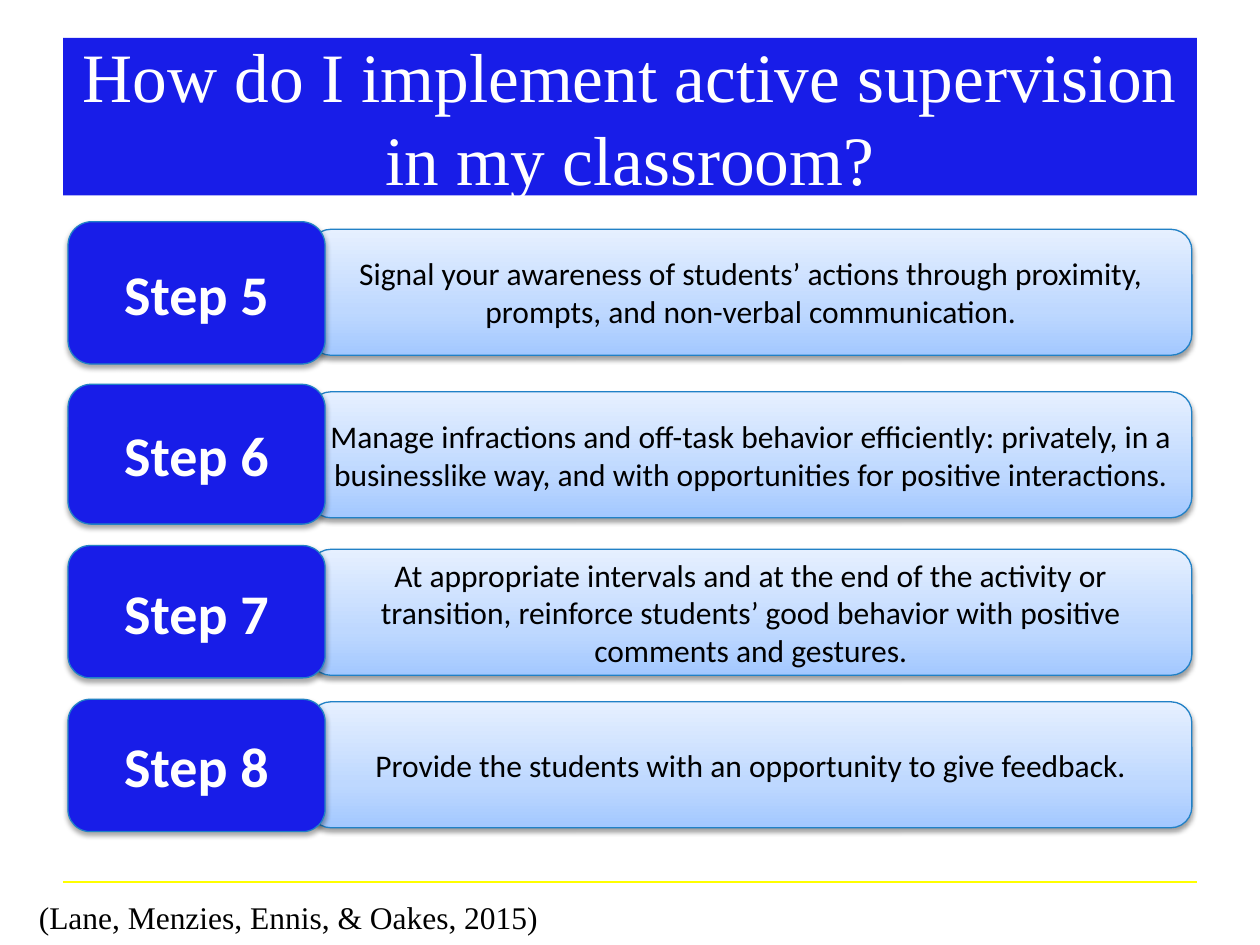
from copy import deepcopy
from dataclasses import dataclass

from lxml.etree import SubElement
from pptx import Presentation
from pptx.dml.color import RGBColor
from pptx.enum.shapes import MSO_CONNECTOR as Connector, MSO_SHAPE as Preset
from pptx.enum.text import MSO_ANCHOR as Anchor, MSO_AUTO_SIZE as AutoSize, PP_ALIGN as Align
from pptx.oxml.ns import qn
from pptx.util import Inches, Pt

COLORS = {
    "blue": "181DE8",
    "outline": "2181C6",
    "rule": "FFFF00",
    "white": "FFFFFF",
    "black": "000000",
}
GRADIENT = [(0, "A3C8FF"), (0.35, "BED8FF"), (1, "E6F0FF")]
SERIF = "Times New Roman"
SANS = "Calibri"


@dataclass
class Step:
    number: int
    label_top: float
    label_height: float
    body_top: float
    description: str


@dataclass
class TextStyle:
    font: str
    size: float
    color: str
    bold: bool = False
    align: Align = Align.CENTER
    anchor: Anchor = Anchor.MIDDLE


STEPS = [
    Step(5, 1.76, 1.13, 1.82,
         "Signal your awareness of students’ actions through proximity, "
         "prompts, and non-verbal communication."),
    Step(6, 3.05, 1.11, 3.11,
         "Manage infractions and off-task behavior efficiently: privately, in a "
         "businesslike way, and with opportunities for positive interactions."),
    Step(7, 4.33, 1.05, 4.36,
         "At appropriate intervals and at the end of the activity or transition, "
         "reinforce students’ good behavior with positive comments and gestures."),
    Step(8, 5.55, 1.05, 5.57,
         "Provide the students with an opportunity to give feedback."),
]
TITLE_STYLE = TextStyle(SERIF, 39.6, "white")
CITATION_STYLE = TextStyle(SERIF, 18, "black", align=Align.LEFT, anchor=Anchor.TOP)
BODY_STYLE = TextStyle(SANS, 18, "black")
LABEL_STYLE = TextStyle(SANS, 32, "white", bold=True)


def rgb(name: str) -> RGBColor:
    return RGBColor.from_string(COLORS[name])


def write_text(shape, text: str, style: TextStyle) -> None:
    frame = shape.text_frame
    frame.word_wrap = True
    frame.vertical_anchor = style.anchor
    paragraph = frame.paragraphs[0]
    paragraph.alignment = style.align
    run = paragraph.add_run()
    run.text = text
    run.font.name = style.font
    run.font.size = Pt(style.size)
    run.font.bold = style.bold
    run.font.color.rgb = rgb(style.color)


def add_shadow(shape, opacity: int, distance: float) -> None:
    shape.shadow.inherit = False
    effects = shape._element.spPr.find(qn("a:effectLst"))
    shadow = SubElement(effects, qn("a:outerShdw"), blurRad=str(Pt(3.1)),
                        dist=str(Pt(distance)), dir="5400000", rotWithShape="0")
    color = SubElement(shadow, qn("a:srgbClr"), val=COLORS["black"])
    SubElement(color, qn("a:alpha"), val=str(opacity * 1000))


def fill_gradient(shape) -> None:
    shape.fill.gradient()
    shape.fill.gradient_angle = 90
    stop_list = shape._element.spPr.find(".//" + qn("a:gsLst"))
    stop_list.append(deepcopy(stop_list[-1]))
    for stop, (position, color) in zip(shape.fill.gradient_stops, GRADIENT):
        stop.position = position
        stop.color.rgb = RGBColor.from_string(color)


def add_card(slide, left: float, top: float, width: float, height: float):
    card = slide.shapes.add_shape(Preset.ROUNDED_RECTANGLE, Inches(left), Inches(top),
                                  Inches(width), Inches(height))
    card.line.color.rgb = rgb("outline")
    card.line.width = Pt(0.75)
    return card


def add_body(slide, step: Step) -> None:
    body = add_card(slide, 2.46, step.body_top, 7, 1)
    fill_gradient(body)
    add_shadow(body, 38, 1.6)
    write_text(body, step.description, BODY_STYLE)


def add_label(slide, step: Step) -> None:
    label = add_card(slide, 0.54, step.label_top, 2.04, step.label_height)
    label.fill.solid()
    label.fill.fore_color.rgb = rgb("blue")
    add_shadow(label, 35, 1.8)
    write_text(label, f"Step {step.number}", LABEL_STYLE)


def add_rule(slide) -> None:
    rule = slide.shapes.add_connector(Connector.STRAIGHT, Inches(0.5), Inches(7),
                                      Inches(9.5), Inches(7))
    rule.line.color.rgb = rgb("rule")
    rule.line.width = Pt(0.75)
    SubElement(rule._element.spPr, qn("a:effectLst"))


def add_title(slide) -> None:
    title = slide.shapes.title
    title.left, title.top = Inches(0.5), Inches(0.3)
    title.width, title.height = Inches(9), Inches(1.25)
    title.fill.solid()
    title.fill.fore_color.rgb = rgb("blue")
    title.text_frame.auto_size = AutoSize.NONE
    write_text(title, "How do I implement active supervision in my classroom?", TITLE_STYLE)


def add_citation(slide) -> None:
    citation = slide.shapes.add_textbox(Inches(0.21), Inches(7.08), Inches(6.6), Inches(0.4))
    citation.text_frame.auto_size = AutoSize.SHAPE_TO_FIT_TEXT
    write_text(citation, "(Lane, Menzies, Ennis, & Oakes, 2015)", CITATION_STYLE)


def main() -> None:
    presentation = Presentation()
    presentation.slide_width = Inches(10)
    presentation.slide_height = Inches(7.5)
    slide = presentation.slides.add_slide(presentation.slide_layouts[5])
    add_rule(slide)
    add_title(slide)
    add_citation(slide)
    for step in STEPS:
        add_body(slide, step)
        add_label(slide, step)
    presentation.save("out.pptx")


if __name__ == "__main__":
    main()
